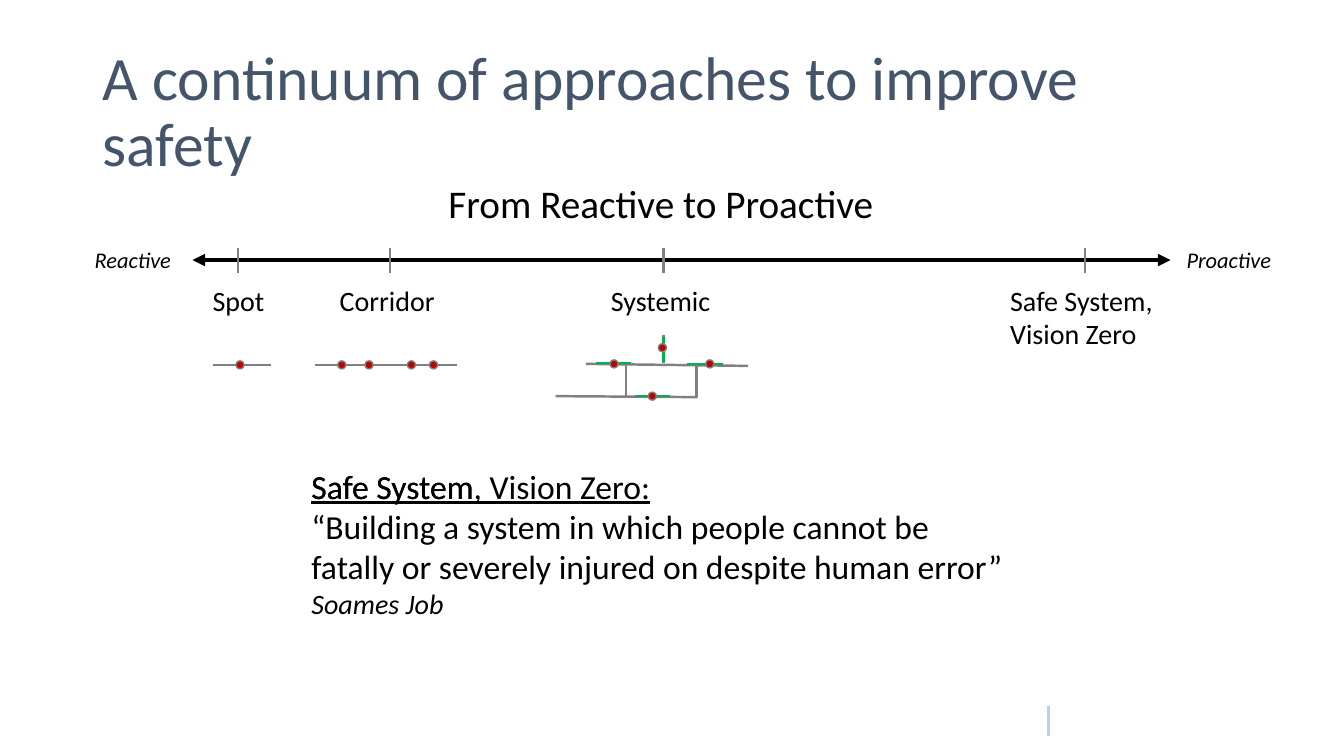
from collections import namedtuple
from dataclasses import dataclass

from lxml import etree
from pptx import Presentation
from pptx import util as u
from pptx.dml.color import RGBColor
from pptx.enum import shapes, text
from pptx.oxml import ns

Box = namedtuple("Box", "left top width height")


@dataclass(frozen=True)
class Theme:
    """Colours, font and type sizes of the slide."""
    font: str = "Calibri"
    title: str = "44546A"
    ink: str = "000000"
    road: str = "808080"
    treated: str = "00B050"
    crash: str = "C00000"
    accent: str = "B5D2EC"
    title_size: int = 44
    subtitle_size: int = 28
    quote_size: int = 24
    label_size: int = 20
    end_size: int = 16


THEME = Theme()


def add_text(slide, box, paragraphs, wrap=True, **settings):
    """Add a text box whose paragraphs are lists of (words, format) runs."""
    shape = slide.shapes.add_textbox(*map(u.Inches, box))
    frame = shape.text_frame
    frame.word_wrap = wrap
    for name, value in settings.items():
        setattr(frame, name, value)
    for index, runs in enumerate(paragraphs):
        paragraph = frame.paragraphs[0] if index == 0 else frame.add_paragraph()
        for words, formats in runs:
            run = paragraph.add_run()
            run.text = words
            values = {"name": THEME.font, "color": THEME.ink, **formats}
            run.font.color.rgb = RGBColor.from_string(values.pop("color"))
            for name, value in values.items():
                setattr(run.font, name, value)
    return shape


def add_line(slide, box, start, end, color=THEME.road, width=1.75, arrows=False):
    """Draw a straight line between two points measured from the box corner."""
    points = [u.Inches(origin + offset) for point in (start, end)
              for origin, offset in zip(box[:2], point)]
    line = slide.shapes.add_connector(shapes.MSO_CONNECTOR.STRAIGHT, *points)
    line.line.color.rgb = RGBColor.from_string(color)
    line.line.width = u.Pt(width)
    properties = line._element.spPr
    if arrows:
        for tag in ("a:headEnd", "a:tailEnd"):
            etree.SubElement(line.line._get_or_add_ln(), ns.qn(tag), type="triangle")
    etree.SubElement(properties, ns.qn("a:effectLst"))


def add_crash(slide, box, x, y, size=0.08):
    """Mark a crash site with a dot centred on a point in the box."""
    corner = (box.left + x - size / 2, box.top + y - size / 2)
    dot = slide.shapes.add_shape(shapes.MSO_SHAPE.OVAL,
                                 *map(u.Inches, (*corner, size, size)))
    dot.shadow.inherit = False
    dot.fill.solid()
    dot.fill.fore_color.rgb = RGBColor.from_string(THEME.crash)
    dot.line.color.rgb = RGBColor.from_string(THEME.road)
    dot.line.width = u.Pt(1)


def draw_heading(slide, box):
    """Place the title and the subtitle that follows it."""
    title = [("A continuum of approaches to improve safety",
              {"size": u.Pt(THEME.title_size), "color": THEME.title})]
    shape = add_text(slide, box, [title], vertical_anchor=text.MSO_ANCHOR.MIDDLE)
    shape.text_frame.paragraphs[0].line_spacing = 0.9
    subtitle = [("From Reactive to Proactive", {"size": u.Pt(THEME.subtitle_size)})]
    add_text(slide, Box(box.left + 3.43, box.top + 1.33, 4.47, 0.57), [subtitle], wrap=False)


def draw_continuum(slide, box):
    """Draw the two-headed scale with its ticks, approaches and end labels."""
    axis = 0.19
    add_line(slide, box, (1.07, axis), (10.77, axis), THEME.ink, 3, arrows=True)
    approaches = (("Spot", 1.52, 1.17, 0.83), ("Corridor", 3.03, 2.43, 1.33),
                  ("Systemic", 5.74, 5.12, 1.33),
                  ("Safe System, Vision Zero", 9.92, 9.08, 1.75))
    for name, tick, left, width in approaches:
        add_line(slide, box, (tick, axis - 0.12), (tick, axis + 0.13))
        height = 0.77 if "," in name else 0.44
        add_text(slide, Box(box.left + left, box.top + 0.37, width, height),
                 [[(name, {"size": u.Pt(THEME.label_size)})]])
    for name, left in (("Reactive", 0), ("Proactive", box.width - 1.15)):
        add_text(slide, Box(box.left + left, box.top, 1.15, 0.37),
                 [[(name, {"size": u.Pt(THEME.end_size), "italic": True})]])


def draw_road(slide, box, crashes):
    """Draw a single road across the box with crash dots along it."""
    middle = box.height / 2
    add_line(slide, box, (0, middle), (box.width, middle))
    for x in crashes:
        add_crash(slide, box, x, middle)


def draw_network(slide, box):
    """Draw the road network with treated stretches and their crash dots."""
    roads = (((0, 0.61), (1.41, 0.62)), ((1.07, 0), (1.07, 0.28)),
             ((0.3, 0.29), (1.91, 0.31)), ((0.7, 0.28), (0.7, 0.62)),
             ((1.4, 0.29), (1.4, 0.62)))
    treated = (((0.79, 0.61), (1.14, 0.61)), ((1.3, 0.29), (1.66, 0.29)),
               ((0.4, 0.28), (0.75, 0.28)), ((1.07, 0.02), (1.07, 0.27)))
    for color, stretches in ((THEME.road, roads), (THEME.treated, treated)):
        for start, end in stretches:
            add_line(slide, box, start, end, color)
    for x, y in ((0.96, 0.61), (1.53, 0.29), (0.58, 0.29), (1.06, 0.13)):
        add_crash(slide, box, x, y)


def draw_quote(slide, box):
    """Place the underlined heading over the quotation and its author."""
    size = u.Pt(THEME.quote_size)
    underlined = {"size": size, "underline": True}
    add_text(slide, box._replace(height=0.5), [[("Safe System, Vision Zero:", underlined)]])
    quotation = ("“Building a system in which people cannot be fatally or severely "
                 "injured on despite human error” ")
    author = {"size": u.Pt(THEME.label_size), "italic": True}
    add_text(slide, box, [[("Safe System", underlined)],
                          [(quotation, {"size": size}), ("Soames Job", author)]])


def main():
    """Build the slide and save it."""
    presentation = Presentation()
    presentation.slide_width = u.Inches(13.33)
    presentation.slide_height = u.Inches(7.5)
    slide = presentation.slides.add_slide(presentation.slide_layouts[6])
    add_line(slide, Box(10.4, 7, 0, 0.3), (0, 0), (0, 0.3), THEME.accent, 2)
    draw_heading(slide, Box(0.92, 0.4, 11.5, 1.45))
    draw_continuum(slide, Box(0.84, 2.39, 11.98, 1.14))
    draw_road(slide, Box(2.11, 3.58, 0.58, 0.08), [0.27])
    draw_road(slide, Box(3.12, 3.58, 1.41, 0.08), [0.27, 0.54, 0.96, 1.18])
    draw_network(slide, Box(5.51, 3.32, 1.91, 0.62))
    draw_quote(slide, Box(2.99, 4.57, 7.21, 1.65))
    presentation.save("out.pptx")


if __name__ == "__main__":
    main()
